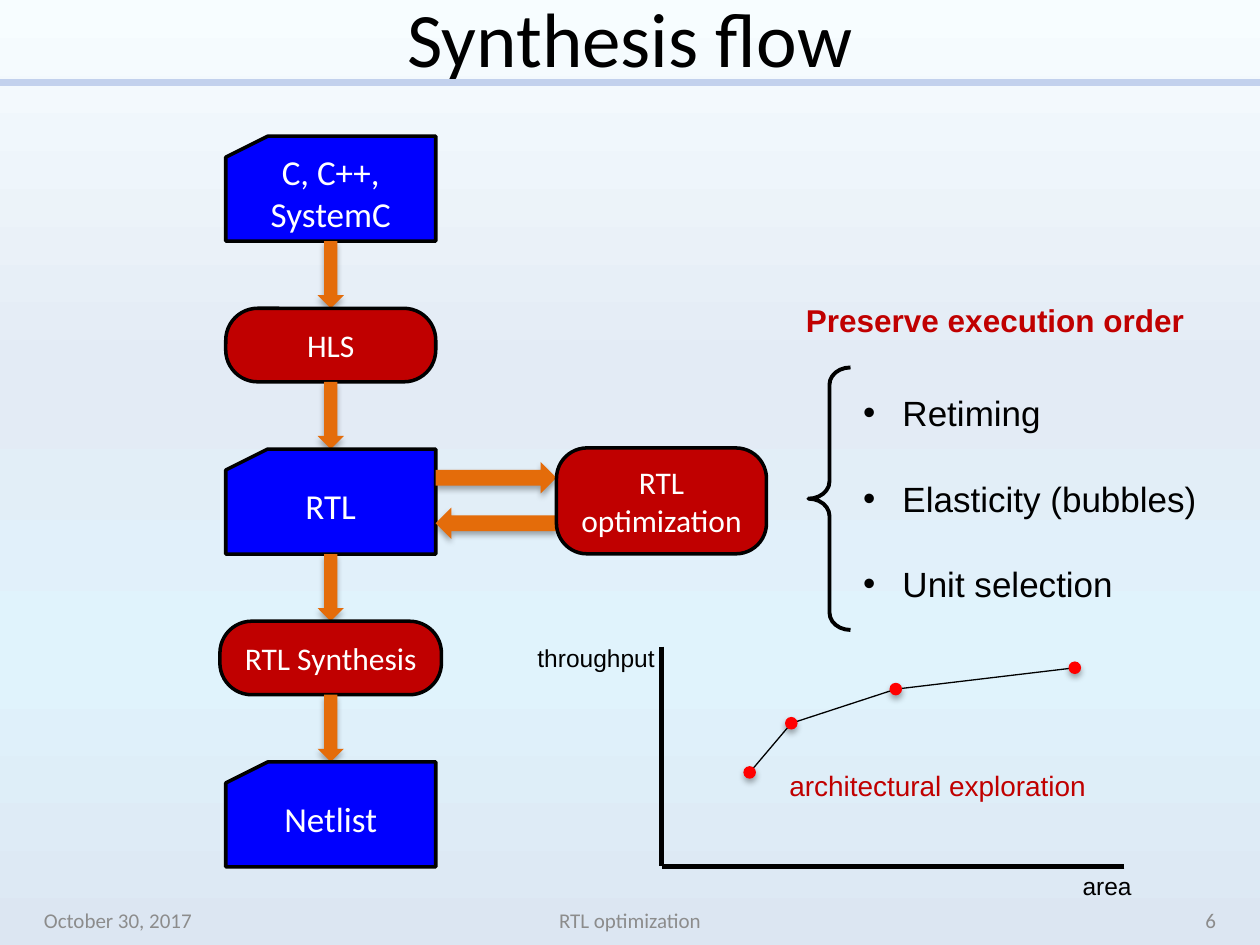
from lxml import etree
from pptx import Presentation
from pptx import util as u
from pptx.dml import color
from pptx.enum import shapes, text
from pptx.oxml import ns

Pt = u.Pt
KIND = shapes.MSO_SHAPE
LEFT, MID, RIGHT = text.PP_ALIGN.LEFT, text.PP_ALIGN.CENTER, text.PP_ALIGN.RIGHT
BLACK, WHITE, GREY = "000000", "FFFFFF", "8C8C8C"
BLUE, DARK, RED, ORANGE = "0000FF", "C00000", "FF0000", "E46C0A"


def rgb(code):
    return color.RGBColor.from_string(code)


def sub(node, tag, **attrs):
    return etree.SubElement(node, ns.qn(tag), attrs)


def write(shape, words, size=18, font="Arial", tint=BLACK, bold=False,
          align=LEFT, anchor=text.MSO_ANCHOR.MIDDLE, wrap=True,
          inset=(7.2, 3.6, 7.2, 3.6), after=0):
    """Fill a shape with one paragraph for each item of words."""
    frame = shape.text_frame
    frame.word_wrap = wrap
    frame.auto_size = text.MSO_AUTO_SIZE.NONE
    frame.vertical_anchor = anchor
    (frame.margin_left, frame.margin_top,
     frame.margin_right, frame.margin_bottom) = map(Pt, inset)
    items = [words] if isinstance(words, str) else words
    for i, item in enumerate(items):
        para = frame.paragraphs[0] if i == 0 else frame.add_paragraph()
        para.text = item
        para.alignment = align
        para.space_before = Pt(0)
        para.space_after = Pt(after)
        for run in para.runs:
            run.font.size = Pt(size)
            run.font.name = font
            run.font.bold = bold
            run.font.color.rgb = rgb(tint)


def place(shape, x, y, w, h):
    shape.left, shape.top, shape.width, shape.height = map(Pt, (x, y, w, h))


def label(slide, words, x, y, w, h, **fmt):
    write(slide.shapes.add_textbox(Pt(x), Pt(y), Pt(w), Pt(h)), words, **fmt)


def line(slide, start, end, width, tint=BLACK):
    link = slide.shapes.add_connector(
        shapes.MSO_CONNECTOR.STRAIGHT, *map(Pt, (*start, *end)))
    link.line.color.rgb = rgb(tint)
    link.line.width = Pt(width)
    sub(link.element.spPr, "a:effectLst")


def solid(slide, kind, x, y, w, h, fill=None, edge=0):
    shape = slide.shapes.add_shape(kind, Pt(x), Pt(y), Pt(w), Pt(h))
    shape.shadow.inherit = False
    if fill:
        shape.fill.solid()
        shape.fill.fore_color.rgb = rgb(fill)
    else:
        shape.fill.background()
    if edge:
        shape.line.color.rgb = rgb(BLACK)
        shape.line.width = Pt(edge)
    else:
        shape.line.fill.background()
    return shape


def raised(slide, *args):
    """Add a borderless shape with a soft shadow below it."""
    shape = solid(slide, *args)
    glow = shape.element.spPr.find(ns.qn("a:effectLst"))
    cast = sub(glow, "a:outerShdw", blurRad=str(Pt(3.5)), dist=str(Pt(2.2)),
               dir="5400000", rotWithShape="0")
    sub(sub(cast, "a:srgbClr", val=BLACK), "a:alpha", val="32000")


def card(slide, words, *box):
    shape = solid(slide, KIND.FLOWCHART_CARD, *box, BLUE, 2)
    write(shape, words, size=20, font="Calibri", tint=WHITE, align=MID,
          inset=(7.2, 0, 7.2, 7.2))


def tool(slide, words, *box, curve=0.433):
    shape = solid(slide, KIND.ROUNDED_RECTANGLE, *box, DARK, 2)
    shape.adjustments[0] = curve
    write(shape, words, font="Calibri", tint=WHITE, align=MID)


def backdrop(slide):
    fill = slide.background.fill
    fill.gradient()
    fill.gradient_angle = 270
    stops = next(slide.element.iter(ns.qn("a:gsLst")))
    for stop in list(stops):
        stops.remove(stop)
    for spot, tint in ((0, "F7FDFF"), (40, "E3EBF5"), (70, "E0F3FC"), (100, "DCE6F2")):
        sub(sub(stops, "a:gs", pos=str(spot * 1000)), "a:srgbClr", val=tint)


def footer(slide):
    for words, x, w, align in (("October 30, 2017", 18, 168, LEFT),
                               ("RTL optimization", 246, 228, MID),
                               ("6", 534, 168, RIGHT)):
        label(slide, words, x, 511, w, 29, size=12, font="Calibri",
              tint=GREY, align=align)


def flow(slide):
    axis, gap, y = 189, 38.4, 77.8
    steps = ((card, "C, C++,\nSystemC", 120, 60), (tool, "HLS", 120, 42),
             (card, "RTL", 120, 60), (tool, "RTL Synthesis", 126.6, 42),
             (card, "Netlist", 120, 60))
    for i, (draw, words, w, h) in enumerate(steps):
        if i:
            raised(slide, KIND.DOWN_ARROW, axis - 7.5, y - gap, 15, gap, ORANGE)
        draw(slide, words, axis - w / 2, y, w, h)
        y += h + gap
    raised(slide, KIND.LEFT_ARROW, 249, 290, 69, 18, ORANGE)
    raised(slide, KIND.RIGHT_ARROW, 249, 264, 69, 18, ORANGE)
    tool(slide, "RTL optimization", 318, 256, 120, 60.5, curve=0.288)


def methods(slide, body):
    label(slide, "Preserve execution order", 453.5, 168, 232.5, 29,
          tint=DARK, bold=True, wrap=False)
    brace = solid(slide, KIND.LEFT_BRACE, 462, 210, 24, 150, None, 2.25)
    brace.adjustments[0] = 0.409
    place(body, 486, 220, 207, 128)
    write(body, ["Retiming", "Elasticity (bubbles)", "Unit selection"], size=20,
          anchor=text.MSO_ANCHOR.TOP, wrap=False, after=25)
    for para in body.text_frame.paragraphs:
        props = para._p.get_or_add_pPr()
        props.set("marL", str(Pt(22.5)))
        props.set("indent", str(Pt(-22.5)))
        sub(props, "a:buFont", typeface="Arial")
        sub(props, "a:buChar", char="•")


def graph(slide):
    origin = (378, 495)
    line(slide, (378, 369.5), origin, 3)
    line(slide, (642.5, 495), origin, 3)
    label(slide, "throughput", 300, 364, 82, 24, size=14, wrap=False)
    label(slide, "area", 611.5, 494, 42.5, 24, size=14, wrap=False)
    dots = ((428.4, 441.4), (452.2, 413.3), (511.9, 393.8), (614.2, 381.6))
    for start, end in zip(dots, dots[1:]):
        line(slide, start, end, 0.75)
    for x, y in dots:
        raised(slide, KIND.OVAL, x - 3.6, y - 3.6, 7.2, 7.2, RED)
    label(slide, "architectural exploration", 444, 435.5, 186, 27,
          size=16, tint=DARK, wrap=False)


def main():
    deck = Presentation()
    deck.slide_width, deck.slide_height = Pt(720), Pt(540)
    slide = deck.slides.add_slide(deck.slide_layouts[1])
    backdrop(slide)
    line(slide, (0, 47), (720, 47), 4, "C2D1ED")
    title, body = slide.placeholders
    place(title, 36, -6, 648, 54)
    write(title, "Synthesis flow", size=44, font="Calibri", align=MID)
    footer(slide)
    flow(slide)
    methods(slide, body)
    graph(slide)
    deck.save("out.pptx")


if __name__ == "__main__":
    main()
